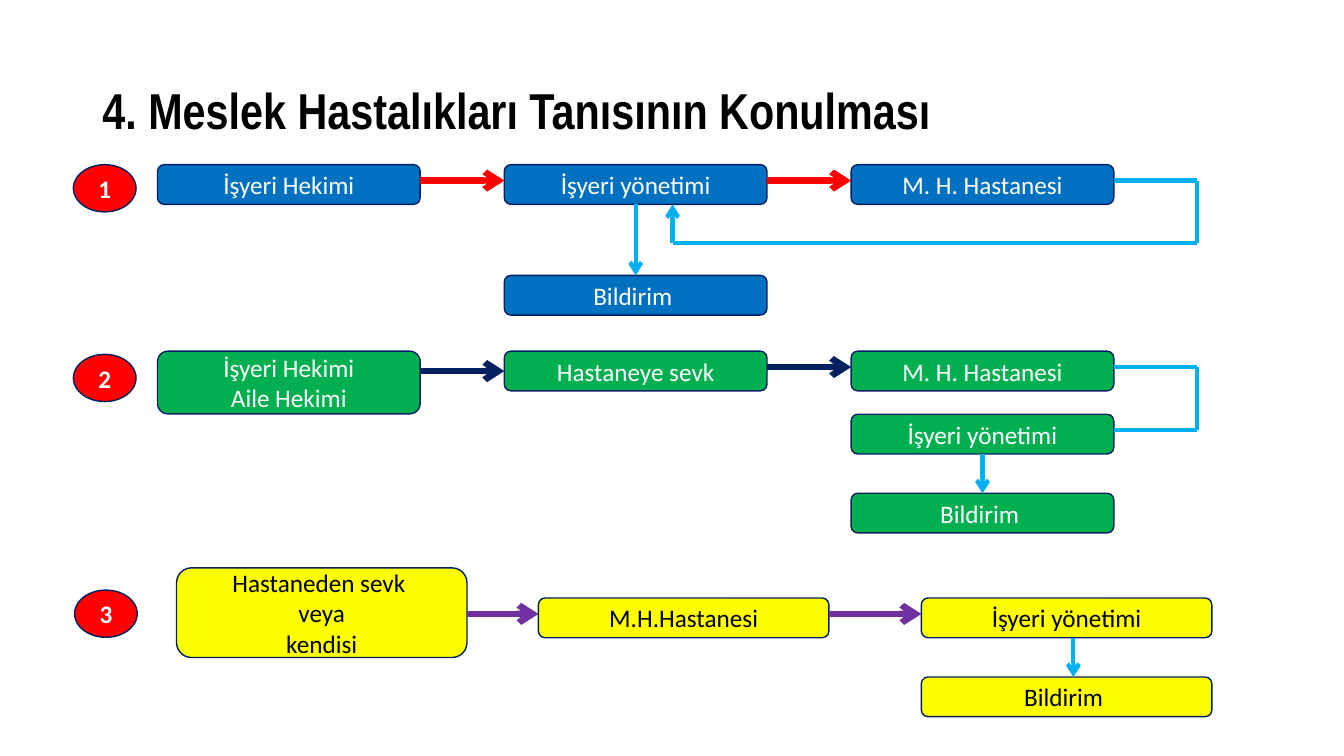
from itertools import pairwise

from lxml import etree
from pptx import Presentation
from pptx.dml.color import RGBColor
from pptx.enum.shapes import MSO_CONNECTOR, MSO_SHAPE
from pptx.enum.text import MSO_ANCHOR, PP_ALIGN
from pptx.oxml.ns import qn
from pptx.util import Cm, Pt

ROUNDED = MSO_SHAPE.ROUNDED_RECTANGLE
OVAL = MSO_SHAPE.OVAL
STRAIGHT = MSO_CONNECTOR.STRAIGHT
MIDDLE = MSO_ANCHOR.MIDDLE
CENTER = PP_ALIGN.CENTER

COLORS = {
    "black": "000000", "white": "FFFFFF", "navy": "002060", "blue": "0070C0",
    "sky": "00B0F0", "green": "00B050", "red": "FF0000", "yellow": "FFFF00",
    "purple": "7030A0",
}

# Lengths in cm
BOX_H = 1.0
LANE_Y = 0.4      # main arrows, below the top of the boxes
STEP_W = 6.62     # boxes of flows 1 and 2
PITCH = 8.74
LOOP_OUT = 2.1    # reach of the return loop beyond the last box
LOOP_H = 1.58


def rgb(name):
    return RGBColor.from_string(COLORS[name])


def add_node(s, shape, x, y, w, h, text, fill, color, bold=False):
    """Filled shape with a navy outline and centred text."""
    sp = s.shapes.add_shape(shape, Cm(x), Cm(y), Cm(w), Cm(h))
    sp.shadow.inherit = False
    sp.fill.solid()
    sp.fill.fore_color.rgb = rgb(fill)
    sp.line.color.rgb = rgb("navy")
    sp.line.width = Pt(1)
    tf = sp.text_frame
    tf.word_wrap = True
    tf.vertical_anchor = MIDDLE
    tf.text = text
    for p in tf.paragraphs:
        p.alignment = CENTER
        p.font.name = "Calibri"
        p.font.size = Pt(18)
        p.font.bold = bold
        p.font.color.rgb = rgb(color)


def add_path(s, points, color="sky", width=3, arrow=True):
    """Straight lines through the points, with an arrowhead on the last."""
    for (x1, y1), (x2, y2) in pairwise(points):
        line = s.shapes.add_connector(STRAIGHT, Cm(x1), Cm(y1), Cm(x2), Cm(y2))
        line.line.color.rgb = rgb(color)
        line.line.width = Pt(width)
        etree.SubElement(line._element.spPr, qn("a:effectLst"))
    if arrow:
        etree.SubElement(line.line._get_or_add_ln(), qn("a:tailEnd"), type="arrow")


def add_badge(s, x, y, number):
    add_node(s, OVAL, x, y, 1.58, 1.19, number, "red", "white", bold=True)


def add_title(s, x, y, w, h):
    tf = s.shapes.add_textbox(Cm(x), Cm(y), Cm(w), Cm(h)).text_frame
    tf.word_wrap = True
    tf.vertical_anchor = MIDDLE
    p = tf.paragraphs[0]
    p.text = "4. Meslek Hastalıkları Tanısının Konulması"
    p.line_spacing = 0.9
    p.font.name = "Arial Narrow"
    p.font.size = Pt(36)
    p.font.bold = True
    p.font.color.rgb = rgb("black")


def add_workplace_flow(s, x, y):
    """Flow 1: physician, management, hospital and back to management."""
    columns = [x + i * PITCH for i in range(3)]
    lane, bottom, loop_y = y + LANE_Y, y + BOX_H, y + LANE_Y + LOOP_H
    report_y = y + 2.79
    for left, text in zip(columns, ("İşyeri Hekimi", "İşyeri yönetimi", "M. H. Hastanesi")):
        add_node(s, ROUNDED, left, y, STEP_W, BOX_H, text, "blue", "white")
    add_node(s, ROUNDED, columns[1], report_y, STEP_W, BOX_H, "Bildirim ", "blue", "white")
    for left, right in pairwise(columns):
        add_path(s, [(left + STEP_W, lane), (right, lane)], "red", 4.5)

    # Return loop and report
    middle = columns[1] + STEP_W / 2
    edge = columns[2] + STEP_W
    add_path(s, [(edge, lane), (edge + LOOP_OUT, lane), (edge + LOOP_OUT, loop_y),
                 (middle + 0.93, loop_y), (middle + 0.93, bottom)])
    add_path(s, [(middle, bottom), (middle, report_y)])


def add_referral_flow(s, x, y):
    """Flow 2: physicians, referral, hospital, then management below it."""
    columns = [x + i * PITCH for i in range(3)]
    lane, loop_y = y + LANE_Y, y + LANE_Y + LOOP_H
    manage_y, report_y = y + 1.59, y + 3.58
    for col, top, h, text in (
        (0, y, 1.58, "İşyeri Hekimi\nAile Hekimi"),
        (1, y, BOX_H, "Hastaneye sevk"),
        (2, y, BOX_H, "M. H. Hastanesi"),
        (2, manage_y, BOX_H, "İşyeri yönetimi"),
        (2, report_y, BOX_H, "Bildirim "),
    ):
        add_node(s, ROUNDED, columns[col], top, STEP_W, h, text, "green", "white")
    for (left, right), arrow_y in zip(pairwise(columns), (lane + 0.1, lane)):
        add_path(s, [(left + STEP_W, arrow_y), (right, arrow_y)], "navy", 4.5)

    # Hospital to management, management to report
    middle = columns[2] + STEP_W / 2
    edge = columns[2] + STEP_W
    add_path(s, [(edge, lane), (edge + LOOP_OUT, lane), (edge + LOOP_OUT, loop_y),
                 (edge, loop_y)], arrow=False)
    add_path(s, [(middle, manage_y + BOX_H), (middle, report_y)])


def add_hospital_flow(s, x, y):
    """Flow 3: hospital referral or own request, hospital, management."""
    w = 7.32
    columns = [x, x + 9.12, x + 18.77]
    lane, report_y = y + LANE_Y, y + 1.99
    for col, top, h, text in (
        (0, y - 0.76, 2.26, "Hastaneden sevk \nveya\nkendisi"),
        (1, y, BOX_H, "M.H.Hastanesi"),
        (2, y, BOX_H, "İşyeri yönetimi"),
        (2, report_y, BOX_H, "Bildirim "),
    ):
        add_node(s, ROUNDED, columns[col], top, w, h, text, "yellow", "black")
    for left, right in pairwise(columns):
        add_path(s, [(left + w, lane), (right, lane)], "purple", 4.5)
    down = columns[2] + w / 2 + 0.17
    add_path(s, [(down, y + BOX_H), (down, report_y)])


def main():
    prs = Presentation()
    prs.slide_width, prs.slide_height = Cm(33.87), Cm(19.05)
    s = prs.slides.add_slide(prs.slide_layouts[6])

    add_title(s, 2.33, 1.01, 29.21, 3.68)
    add_workplace_flow(s, 3.97, 4.15)
    add_referral_flow(s, 3.97, 8.85)
    add_hospital_flow(s, 4.45, 15.07)
    for number, (x, y) in enumerate(((1.85, 4.15), (1.85, 8.93), (1.88, 14.87)), 1):
        add_badge(s, x, y, str(number))

    prs.save("out.pptx")


if __name__ == "__main__":
    main()
